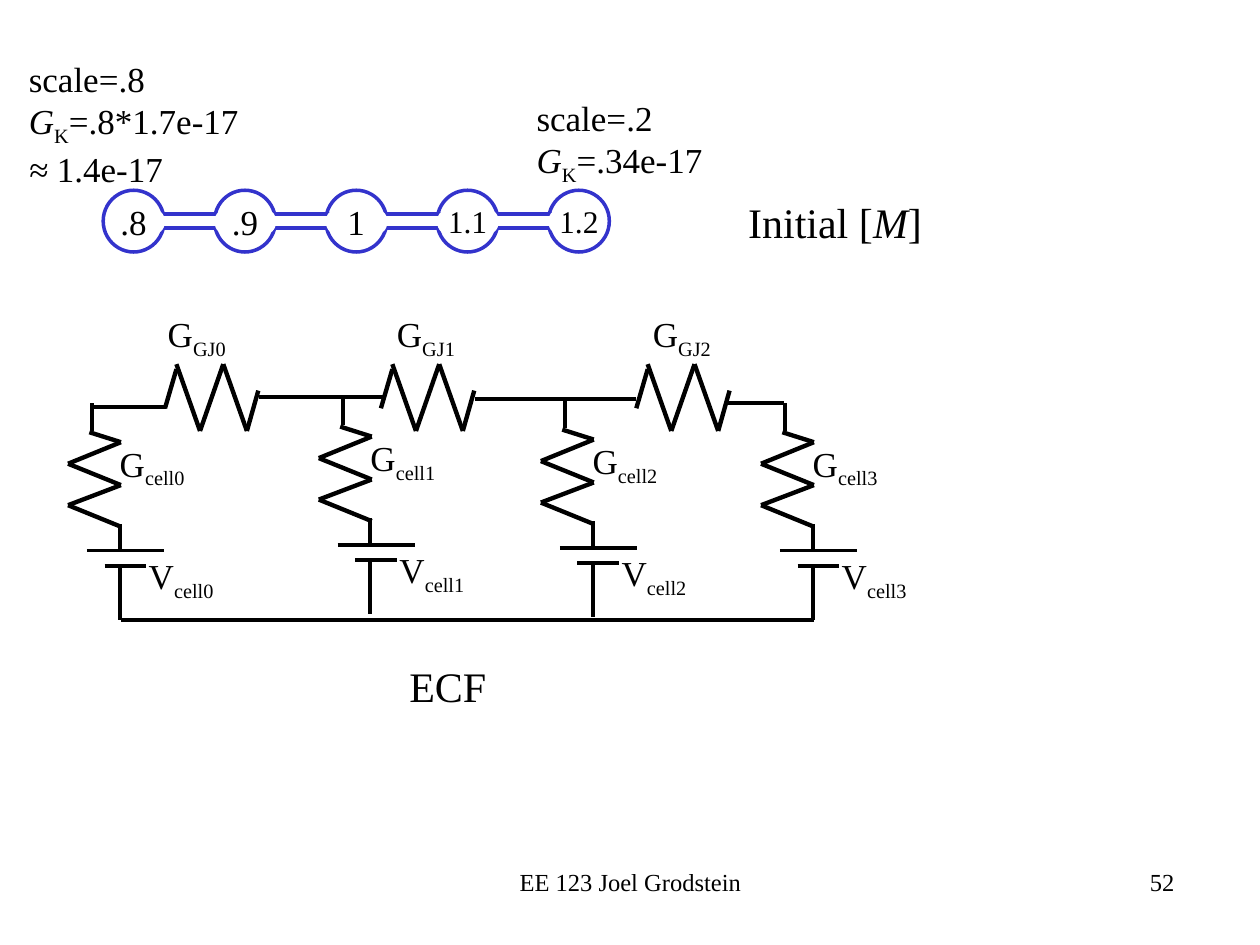
from itertools import pairwise

from pptx import Presentation
from pptx import util as u
from pptx.dml.color import RGBColor
from pptx.enum import shapes, text
from pptx.oxml.ns import qn
from lxml import etree

Pt = u.Pt
BLACK = RGBColor(0, 0, 0)
WHITE = RGBColor(255, 255, 255)
BLUE = RGBColor(0x33, 0x33, 0xCC)
FONT = "Times New Roman"
WIRE, ZIGZAG = 2.25, 2.5
PLAIN, ITALIC, SUB = "plain", "italic", "sub"
NO_INSETS = dict.fromkeys(("margin_left", "margin_top", "margin_right", "margin_bottom"), 0)


def apply(target, values):
    for name, value in values.items():
        setattr(target, name, value)


def write(frame, paragraphs, size, align=text.PP_ALIGN.LEFT, **frame_format):
    apply(frame, frame_format)
    for index, runs in enumerate(paragraphs):
        paragraph = frame.add_paragraph() if index else frame.paragraphs[0]
        paragraph.alignment = align
        for words, style in runs:
            run = paragraph.add_run()
            run.text = words
            apply(run.font, {"name": FONT, "size": Pt(size), "italic": style == ITALIC})
            run.font.color.rgb = BLACK
            if style == SUB:
                run.font._element.set("baseline", "-25000")


def add_text(parent, box, paragraphs, size, align=text.PP_ALIGN.LEFT, **frame_format):
    shape = parent.add_textbox(*map(Pt, box))
    values = {"word_wrap": True, "auto_size": text.MSO_AUTO_SIZE.SHAPE_TO_FIT_TEXT}
    write(shape.text_frame, paragraphs, size, align, **(values | frame_format))


def add_label(parent, box, letter, index_name, wrap=False):
    add_text(parent, box, [[(letter, PLAIN), (index_name, SUB)]], 20,
             word_wrap=wrap, **NO_INSETS)


def add_line(parent, start, end, width=WIRE):
    line = parent.add_connector(shapes.MSO_CONNECTOR.STRAIGHT, *map(Pt, (*start, *end)))
    line.line.color.rgb = BLACK
    line.line.width = Pt(width)
    etree.SubElement(line._element.spPr, qn("a:effectLst"))


def add_plain_shape(parent, kind, box, fill=None, outline=None):
    shape = parent.add_shape(kind, *map(Pt, box))
    shape.shadow.inherit = False
    if fill is None:
        shape.fill.background()
    else:
        shape.fill.solid()
        shape.fill.fore_color.rgb = fill
    if outline is None:
        shape.line.fill.background()
    else:
        shape.line.color.rgb = outline
        shape.line.width = Pt(2)
    return shape


def add_cell_chain(parent, left, top, values):
    oval, rectangle = shapes.MSO_SHAPE.OVAL, shapes.MSO_SHAPE.RECTANGLE
    pitch, width, height = 63.6, 34.8, 35.3
    for index, value in enumerate(values):
        cell = add_plain_shape(parent, oval, (left + index * pitch, top, width, height),
                               outline=BLUE)
        write(cell.text_frame, [[(value, PLAIN)]], 18 if len(value) > 2 else 20,
              text.PP_ALIGN.CENTER, vertical_anchor=text.MSO_ANCHOR.MIDDLE, **NO_INSETS)
    for index in range(len(values) - 1):
        cell_left = left + index * pitch
        add_plain_shape(parent, rectangle, (cell_left + 29.8, top + 13.7, 37.4, 7.9),
                        WHITE, BLUE)
        for opening in (cell_left + width - 9, cell_left + pitch):
            add_plain_shape(parent, oval, (opening, top + 11.5, 9.4, 13), WHITE)


def add_cell_branch(parent, left, top, name, wrap_resistor_label):
    branch = parent.add_group_shape().shapes
    wires = [((10.8, 84.2), (54.7, 84.2)), ((20.9, 92.9), (44.6, 92.9)),
             ((29.5, 93.6), (29.5, 123.8)), ((29.5, 69.1), (29.5, 85)),
             ((13.7, 0), (13.7, 15.8))]
    resistor = [(12.2, 16.6), (30.2, 22.3), (0, 34.6), (30.2, 46.8), (0, 58.3), (30.2, 70.6)]
    for segments, width in ((wires, WIRE), (pairwise(resistor), ZIGZAG)):
        for (x1, y1), (x2, y2) in segments:
            add_line(branch, (left + x1, top + y1), (left + x2, top + y2), width)
    add_label(branch, (left + 46.1, top + 86.4, 41, 24.5), "V", name)
    add_label(branch, (left + 29.5, top + 22.3, 43, 24.5), "G", name, wrap_resistor_label)


def add_gap_junction(parent, left, top, label_left, name):
    resistor = parent.add_group_shape().shapes
    peaks = [(6.5, 0), (20, 38.2), (33.3, 0), (46.8, 38.2), (53.3, 15.1)]
    for (x1, y1), (x2, y2) in [((0, 25.2), (6.5, 2.9)), *pairwise(peaks)]:
        add_line(resistor, (left + x1, top + y1), (left + x2, top + y2), ZIGZAG)
    add_label(parent, (label_left, top - 29.5, 39.6, 24.5), "G", name, True)


def add_circuit(parent, left, top):
    branches = [(0, 0), (143.3, -3.2), (270.2, -1.5), (396, 0)]
    for index, (x, y) in enumerate(branches):
        add_cell_branch(parent, left + x, top + y, f"cell{index}", index == 3)
    junctions = [(55.4, 56.9), (178.8, 187.9), (324.7, 334.1)]
    for index, (x, label_x) in enumerate(junctions):
        add_gap_junction(parent, left + x, top - 22.3, left + label_x, f"GJ{index}")
    for x1, x2, y in ((13.7, 56.2, 2.2), (109.4, 181.4, -3.6), (232.5, 324.7, -2.2),
                      (377.3, 409, 0), (30.2, 426.2, 123.8)):
        add_line(parent, (left + x1, top + y), (left + x2, top + y))
    add_text(parent, (left + 187.9, top + 143.3, 62.6, 36), [[("ECF", PLAIN)]], 24)


def add_notes_on_scale(parent):
    potassium = [("G", ITALIC), ("K", SUB)]
    add_text(parent, (9.4, 29.5, 141, 80),
             [[("scale=.8", PLAIN)], [*potassium, ("=.8*1.7e-17", PLAIN)],
              [("≈ ", ITALIC), ("1.4e-17", PLAIN)]], 20)
    add_text(parent, (299.5, 51.8, 116.6, 55.4),
             [[("scale=.2", PLAIN)], [*potassium, ("=.34e-17", PLAIN)]], 20)
    add_text(parent, (420.5, 108.7, 122.4, 36),
             [[("Initial [", PLAIN), ("M", ITALIC), ("]", PLAIN)]], 24)


def add_footer(parent, top):
    add_text(parent, (246.2, top, 228.2, 24.5), [[("EE 123 Joel Grodstein", PLAIN)]], 14,
             text.PP_ALIGN.CENTER)
    add_text(parent, (450, top, 228.2, 36), [[("52", PLAIN)]], 14,
             text.PP_ALIGN.RIGHT, auto_size=text.MSO_AUTO_SIZE.NONE)


def main():
    presentation = Presentation()
    apply(presentation, {"slide_width": Pt(720), "slide_height": Pt(540)})
    slide = presentation.slides.add_slide(presentation.slide_layouts[6])
    add_footer(slide.shapes, 491.8)
    add_cell_chain(slide.shapes, 59, 108.7, [".8", ".9", "1", "1.1", "1.2"])
    add_notes_on_scale(slide.shapes)
    add_circuit(slide.shapes, 38.9, 230.4)
    presentation.save("out.pptx")


if __name__ == "__main__":
    main()
